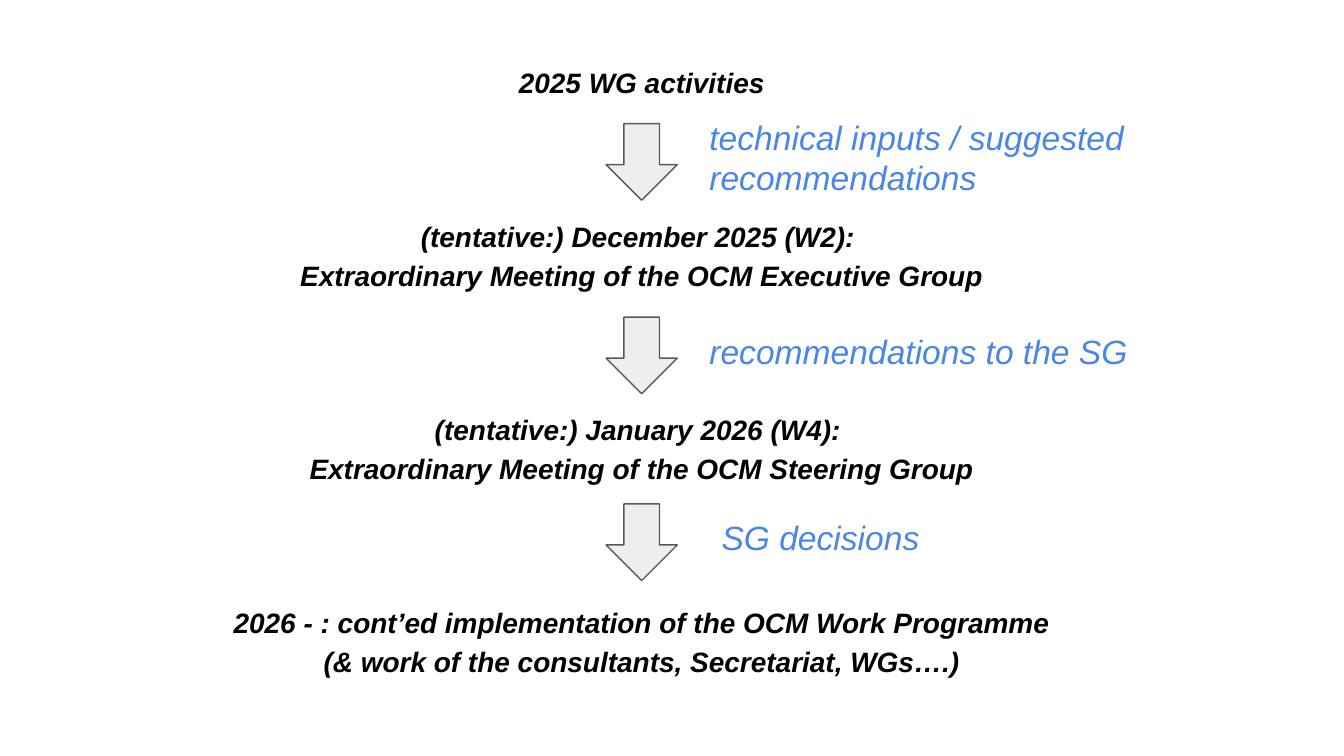
"""Build a slide showing the path from 2025 WG activities to the OCM Work Programme."""
from pptx import Presentation
from pptx.dml.color import RGBColor
from pptx.enum import shapes, text
from pptx.util import Inches, Pt

BLACK = RGBColor(0x00, 0x00, 0x00)
BLUE = RGBColor(0x4A, 0x86, 0xE8)
LIGHT_GREY = RGBColor(0xEE, 0xEE, 0xEE)
DARK_GREY = RGBColor(0x59, 0x59, 0x59)

STAGES = [
    ["2025 WG activities"],
    ["(tentative:) December 2025 (W2): ",
     "Extraordinary Meeting of the OCM Executive Group"],
    ["(tentative:) January 2026 (W4): ",
     "Extraordinary Meeting of the OCM Steering Group"],
    ["2026 - : cont’ed implementation of the OCM Work Programme",
     "(& work of the consultants, Secretariat, WGs….)"],
]
HANDOVERS = [
    (0.92, 5.18, 0.77, "technical inputs / suggested recommendations"),
    (2.36, 5.18, 2.36, "recommendations to the SG"),
    (3.75, 5.27, 3.75, "SG decisions"),
]


def add_text_frame(left, top, width, height):
    frame = slide.shapes.add_textbox(
        Inches(left), Inches(top), Inches(width), Inches(height)).text_frame
    frame.word_wrap = True
    frame.margin_left = frame.margin_right = Inches(0.1)
    frame.margin_top = frame.margin_bottom = Inches(0.1)
    frame.vertical_anchor = text.MSO_ANCHOR.TOP
    return frame


def add_run(paragraph, words, size, color, bold):
    run = paragraph.add_run()
    run.text = words
    run.font.name = "Arial"
    run.font.size = Pt(size)
    run.font.bold = bold
    run.font.italic = True
    run.font.color.rgb = color


prs = Presentation()
prs.slide_width = Inches(10)
prs.slide_height = Inches(10 * 9 / 16)
slide = prs.slides.add_slide(prs.slide_layouts[6])

timeline = add_text_frame(1.26, 0.35, 7.03, 3.74)
for stage_no, stage in enumerate(STAGES):
    for line_no, line in enumerate(stage):
        first = stage_no == 0 and line_no == 0
        paragraph = timeline.paragraphs[0] if first else timeline.add_paragraph()
        paragraph.alignment = text.PP_ALIGN.CENTER
        paragraph.line_spacing = 1.15
        paragraph.space_before = Pt(62 if stage_no and line_no == 0 else 0)
        add_run(paragraph, line, 15, BLACK, True)

for arrow_top, label_left, label_top, handover in HANDOVERS:
    arrow = slide.shapes.add_shape(
        shapes.MSO_SHAPE.DOWN_ARROW,
        Inches(4.51), Inches(arrow_top), Inches(0.53), Inches(0.57))
    arrow.shadow.inherit = False
    arrow.fill.solid()
    arrow.fill.fore_color.rgb = LIGHT_GREY
    arrow.line.color.rgb = DARK_GREY
    arrow.line.width = Pt(0.75)

    label = add_text_frame(label_left, label_top, 3.72, 0.24)
    add_run(label.paragraphs[0], handover, 18, BLUE, False)

prs.save("out.pptx")
